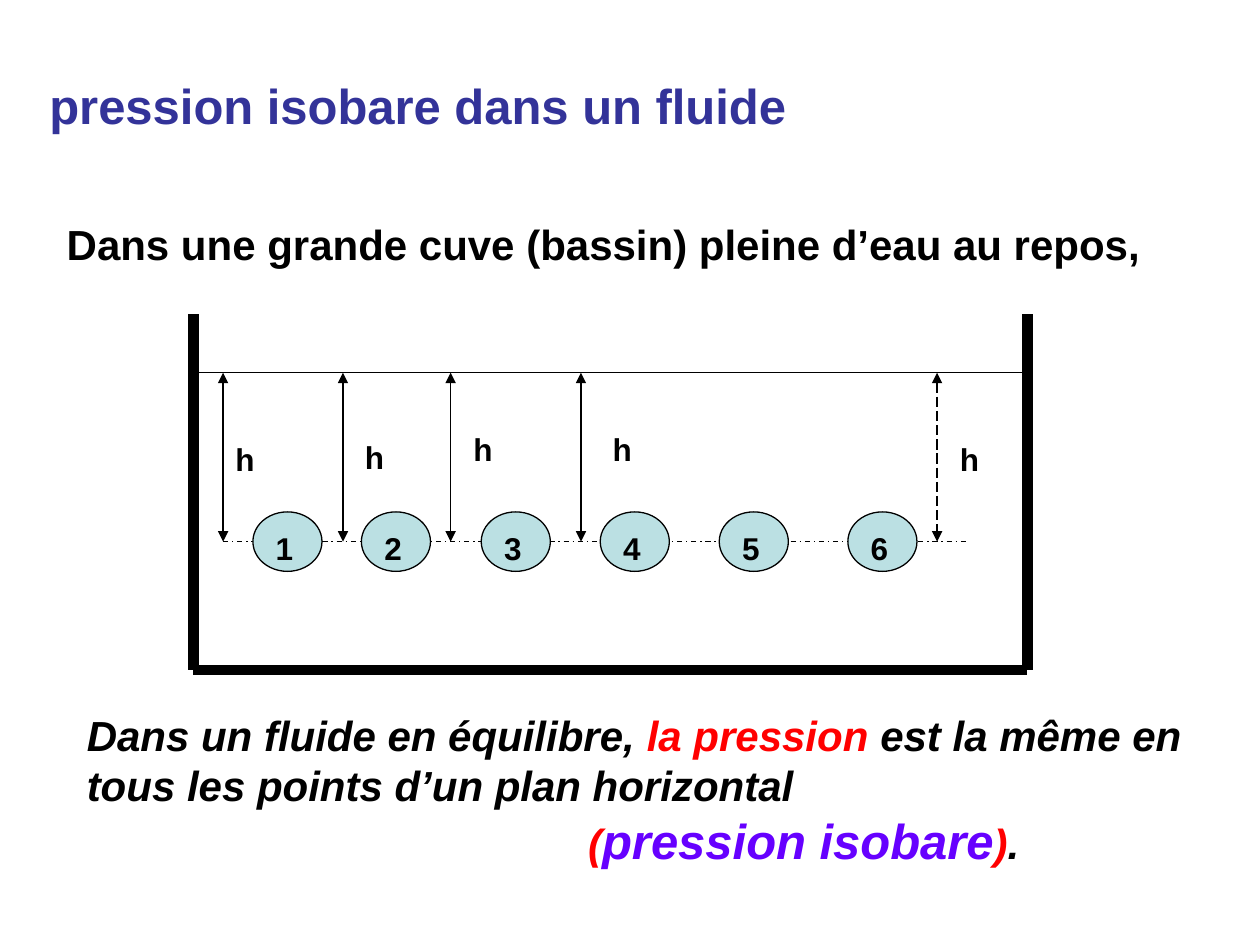
"""Build a slide on isobaric pressure in a tank of water at rest."""
from lxml.etree import SubElement
from pptx import Presentation
from pptx.dml.color import RGBColor
from pptx.enum.dml import MSO_LINE
from pptx.enum.shapes import MSO_CONNECTOR, MSO_SHAPE
from pptx.enum.text import MSO_ANCHOR, PP_ALIGN
from pptx.oxml.ns import qn
from pptx.util import Pt

rgb = RGBColor.from_string


def write(shape, paragraphs, size, anchor=MSO_ANCHOR.MIDDLE, italic=False):
    frame = shape.text_frame
    frame.word_wrap = True
    frame.vertical_anchor = anchor
    for i, runs in enumerate(paragraphs):
        paragraph = frame.add_paragraph() if i else frame.paragraphs[0]
        paragraph.alignment = PP_ALIGN.LEFT
        paragraph.font.name = "Arial"
        paragraph.font.bold = True
        paragraph.font.italic = italic
        paragraph.font.size = Pt(size)
        for text, color, *own_size in runs:
            run = paragraph.add_run()
            run.text = text
            run.font.color.rgb = rgb(color)
            if own_size:
                run.font.size = Pt(own_size[0])


def draw_line(shapes, x1, y1, x2, y2, width=0.75, dash=None, arrows=False):
    line = shapes.add_connector(MSO_CONNECTOR.STRAIGHT, Pt(x1), Pt(y1), Pt(x2), Pt(y2))
    line.line.color.rgb = rgb("000000")
    line.line.width = Pt(width)
    if dash:
        line.line.dash_style = dash
    if arrows:
        for end in ("a:headEnd", "a:tailEnd"):
            SubElement(line.line._get_or_add_ln(), qn(end), type="triangle")
    SubElement(line._element.spPr, qn("a:effectLst"))


prs = Presentation()
prs.slide_width, prs.slide_height = Pt(720), Pt(540)
slide = prs.slides.add_slide(prs.slide_layouts[5])

title = slide.shapes.title
title.left, title.top, title.width, title.height = Pt(21), Pt(15), Pt(648), Pt(90)
write(title, [[("pression isobare dans un fluide", "333399")]], 28)

intro = slide.shapes.add_textbox(Pt(31), Pt(94.5), Pt(646.5), Pt(90))
write(intro, [[("Dans une grande cuve (bassin) pleine d’eau au repos,", "000000")]], 24)

tank = slide.shapes.add_group_shape().shapes
left, right, top, bottom = 110.5, 587, 179.5, 383
surface, isobar = 213, 309.5
draw_line(tank, left, top, left, bottom, 6)
draw_line(tank, right, top, right, bottom, 6)
draw_line(tank, left, bottom, right, bottom, 6)
draw_line(tank, left, surface, right, surface)
draw_line(tank, 127.5, isobar, 553, isobar, dash=MSO_LINE.DASH_DOT)

labels = []
point_width, point_height = 39.5, 34
for number, x in enumerate((144.5, 206.5, 275, 343, 411, 484.5), 1):
    point = tank.add_shape(MSO_SHAPE.OVAL, Pt(x), Pt(isobar - point_height / 2),
                           Pt(point_width), Pt(point_height))
    point.shadow.inherit = False
    point.fill.solid()
    point.fill.fore_color.rgb = rgb("BBE0E3")
    point.line.color.rgb = rgb("000000")
    point.line.width = Pt(0.75)
    labels.append((str(number), x + 6, 298.5))

depths = [(127.5, 127.5, 248), (196, 201.5, 247), (257.5, 263.5, 242),
          (332, 343, 242), (535.5, 541.5, 248)]
for x, label_x, label_y in depths:
    dash = MSO_LINE.LONG_DASH if x == depths[-1][0] else None
    draw_line(tank, x, surface, x, isobar, dash=dash, arrows=True)
    labels.append(("h", label_x, label_y))

for text, x, y in labels:
    label = tank.add_textbox(Pt(x), Pt(y), Pt(28), Pt(29))
    write(label, [[(text, "000000")]], 18, MSO_ANCHOR.TOP)

conclusion = slide.shapes.add_textbox(Pt(42.5), Pt(406), Pt(646.5), Pt(90))
write(conclusion, [
    [("Dans un fluide en équilibre,", "000000"), (" la pression ", "FF0000"),
     ("est la même en tous les points d’un plan horizontal", "000000")],
    [("(", "FF0000"), ("pression isobare", "6600FF", 28), (")", "FF0000"), (".", "000000")],
], 24, italic=True)
isobaric_term = conclusion.text_frame.paragraphs[1]
isobaric_term._p.get_or_add_pPr().set("marL", str(Pt(286.5)))

prs.save("out.pptx")
